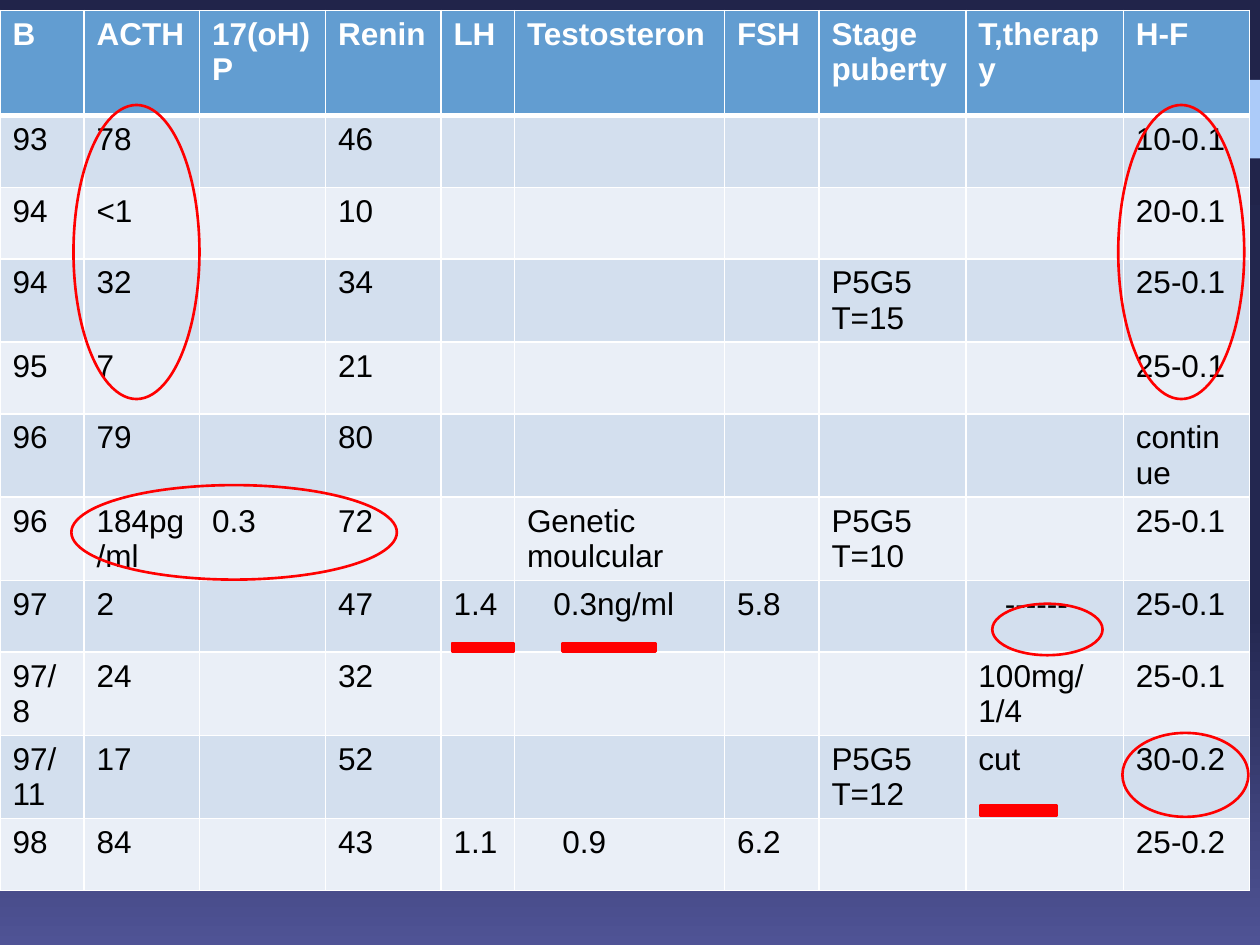
from copy import deepcopy

from lxml import etree
from pptx import Presentation
from pptx.dml.color import RGBColor
from pptx.enum.shapes import MSO_SHAPE
from pptx.oxml.ns import qn
from pptx.util import Inches, Pt

RECT = MSO_SHAPE.RECTANGLE
OVAL = MSO_SHAPE.OVAL
MINUS = MSO_SHAPE.MATH_MINUS
COLORS = {
    "top": "21244A", "middle": "232750", "bottom": "4F5395", "accent": "ACCBF9",
    "header": "629DD1", "odd": "D3DFEE", "even": "EAEFF7",
    "white": "FFFFFF", "black": "000000", "mark": "FF0000",
}
RGB = {name: RGBColor.from_string(value) for name, value in COLORS.items()}
UNIT = Inches(1) / 12


def add_shape(kind, box, fill=None, line=None):
    sp = s.shapes.add_shape(kind, *[round(v * UNIT) for v in box])
    sp.shadow.inherit = False
    if fill:
        sp.fill.solid()
        sp.fill.fore_color.rgb = RGB[fill]
    else:
        sp.fill.background()
    if line:
        sp.line.color.rgb = RGB[line]
        sp.line.width = Pt(1.5)
    else:
        sp.line.fill.background()


def add_border(cell, side, width):
    tcPr = cell._tc.get_or_add_tcPr()
    ln = etree.SubElement(tcPr, qn(f"a:ln{side}"), w=str(Pt(width)))
    fill = etree.SubElement(ln, qn("a:solidFill"))
    etree.SubElement(fill, qn("a:srgbClr"), val=COLORS["white"])


prs = Presentation()
prs.slide_width, prs.slide_height = Inches(10), Inches(7.5)
s = prs.slides.add_slide(prs.slide_layouts[6])

bg = s.background.fill
bg.gradient()
bg.gradient_angle = 270
first = next(s._element.iter(qn("a:gs")))
first.addnext(deepcopy(first))
for stop, (name, pos) in zip(bg.gradient_stops, [("top", 0), ("middle", 0.65), ("bottom", 1)]):
    stop.color.rgb = RGB[name]
    stop.position = pos

for left, width in [(110.6, 1.1), (112.4, 7.6)]:
    add_shape(RECT, (left, 7.6, width, 7.5), fill="accent")

COLS = [8, 11, 12, 11, 7, 20, 9, 14, 15, 12]
HEADER_ROW, BODY_ROW = 10, 6.84
ROWS = [
    ["B", "ACTH", "17(oH)P", "Renin", "LH", "Testosteron", "FSH", "Stage\npuberty", "T,therapy", "H-F"],
    ["93", "78", "", "46", "", "", "", "", "", "10-0.1"],
    ["94", "<1", "", "10", "", "", "", "", "", "20-0.1"],
    ["94", "32", "", "34", "", "", "", "P5G5\nT=15", "", "25-0.1"],
    ["95", "7", "", "21", "", "", "", "", "", "25-0.1"],
    ["96", "79", "", "80", "", "", "", "", "", "continue"],
    ["96", "184pg/ml", "0.3", "72", "", "Genetic moulcular", "", "P5G5\nT=10", "", "25-0.1"],
    ["97", "2", "", "47", "1.4", "0.3ng/ml", "5.8", "", "------", "25-0.1"],
    ["97/8", "24", "", "32", "", "", "", "", "100mg/\n1/4", "25-0.1"],
    ["97/11", "17", "", "52", "", "", "", "P5G5\nT=12", "cut", "30-0.2"],
    ["98", "84", "", "43", "1.1", "0.9", "6.2", "", "", "25-0.2"],
]
INDENTS = {"0.3ng/ml": 0.21, "------": 0.21, "0.9": 0.28}

table = s.shapes.add_table(
    len(ROWS), len(COLS), 0, round(UNIT), round(sum(COLS) * UNIT),
    round((HEADER_ROW + BODY_ROW * (len(ROWS) - 1)) * UNIT),
).table
for column, width in zip(table.columns, COLS):
    column.width = round(width * UNIT)

for i, row in enumerate(ROWS):
    header = i == 0
    table.rows[i].height = round((HEADER_ROW if header else BODY_ROW) * UNIT)
    band = "header" if header else "odd" if i % 2 else "even"
    font = {"name": "Arial", "size": Pt(18), "bold": header}
    for j, text in enumerate(row):
        cell = table.cell(i, j)
        for side in "LRTB":
            thick = (header and side == "B") or (i == 1 and side == "T")
            add_border(cell, side, 3 if thick else 1)
        cell.fill.solid()
        cell.fill.fore_color.rgb = RGB[band]
        cell.margin_left = Inches(0.1 + INDENTS.get(text, 0))
        cell.text = text
        for p in cell.text_frame.paragraphs:
            for r in p.runs:
                for key, value in font.items():
                    setattr(r.font, key, value)
                r.font.color.rgb = RGB["white" if header else "black"]

MARKS = [
    (OVAL, (106.5, 10, 12, 28)),
    (OVAL, (7, 10, 12, 28)),
    (OVAL, (6.8, 46.2, 31, 9)),
    (MINUS, (52, 59.9, 12, 3.5)),
    (MINUS, (42, 59.9, 8, 3.5)),
    (OVAL, (94.5, 57.5, 10.5, 4.9)),
    (OVAL, (106.9, 69.8, 12, 8)),
    (MINUS, (92, 75.2, 10, 4)),
]
for kind, box in MARKS:
    add_shape(kind, box, fill="mark" if kind == MINUS else None, line="mark")

prs.save("out.pptx")
